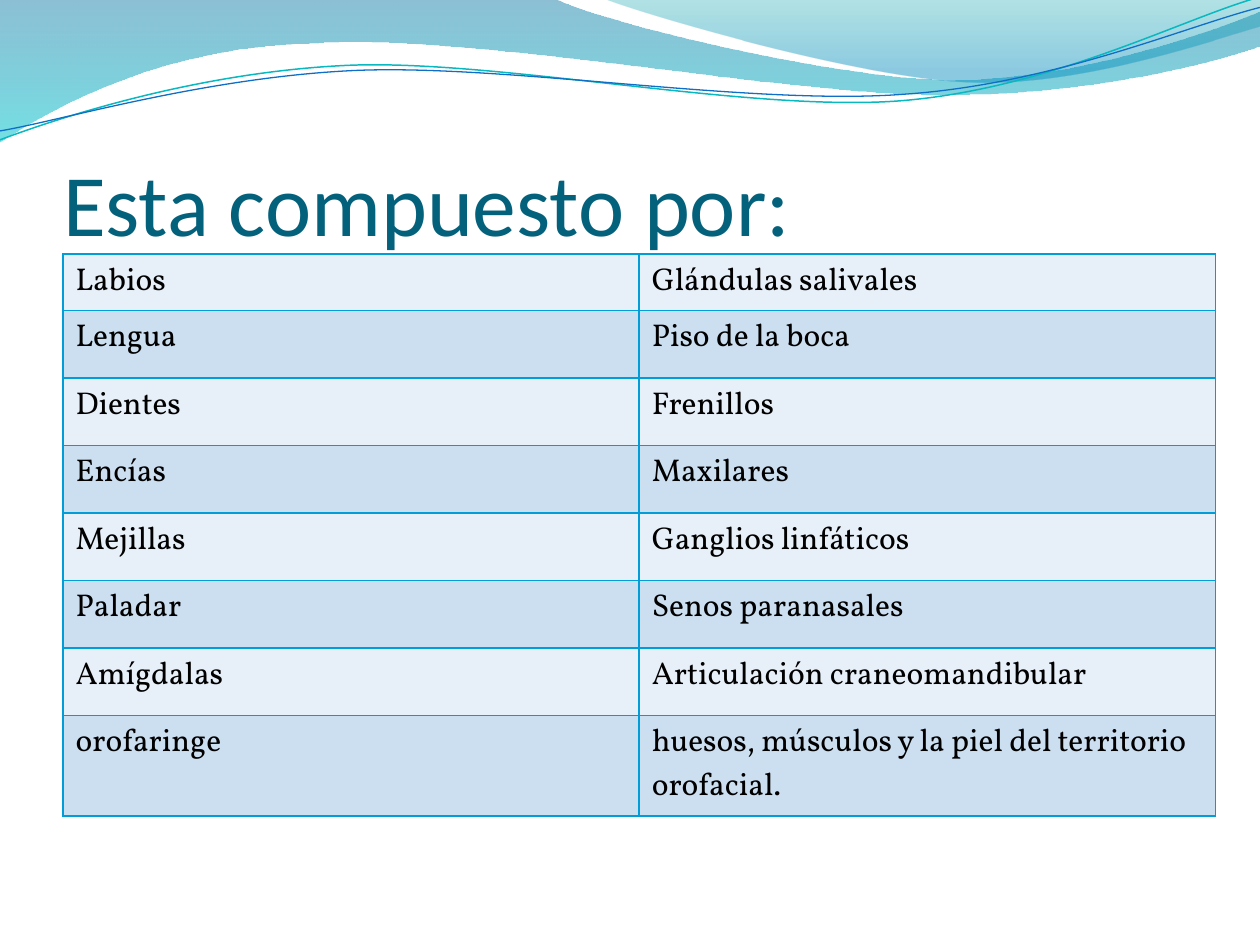
"""Build a slide with a wave header, a title and a two-column table of mouth structures."""
from dataclasses import dataclass
from typing import NamedTuple, Optional

from lxml.etree import SubElement
from pptx import Presentation
from pptx.dml.color import RGBColor
from pptx.enum.text import MSO_ANCHOR, MSO_AUTO_SIZE, PP_ALIGN
from pptx.oxml.ns import qn
from pptx.util import Cm, Pt


@dataclass(frozen=True)
class Theme:
    title_font: str = "Calibri"
    body_font: str = "Vollkorn"
    title_size: float = 50
    body_size: float = 18
    border_width: float = 1
    title: str = "04617B"
    body: str = "000000"
    border: str = "009DD9"
    bands: tuple = ("E7EFF8", "CCDFF1")


class Stop(NamedTuple):
    position: float
    color: str
    opacity: int


class Stroke(NamedTuple):
    color: str
    width: float


@dataclass(frozen=True)
class Wave:
    start: tuple
    segments: tuple
    gradient: tuple = ()
    stroke: Optional[Stroke] = None
    rotation: float = 0


THEME = Theme()
STROKE_TILT = 357.3

WAVES = (
    Wave(
        (0, 0),
        (
            ((11.18, -0.03),),
            ((12.09, 0.43), (16.87, 1.6), (19.25, 1.6)),
            ((21.67, 1.6), (24.33, 0.66), (25.4, 0.23)),
            ((25.43, 0.91),),
            ((24.97, 1.12), (22.1, 1.93), (18.95, 1.91)),
            ((15.8, 1.91), (9.7, 0.71), (6.53, 0.86)),
            ((3.28, 0.91), (1.17, 2.11), (-0.03, 2.87)),
            ((0, 0),),
        ),
        gradient=(Stop(0, "0074A1", 45), Stop(1, "00C6CF", 55)),
    ),
    Wave(
        (12.17, -0.03),
        (
            ((12.93, 0.28), (17.32, 1.57), (19.53, 1.65)),
            ((21.74, 1.75), (24.41, 0.81), (25.4, 0.53)),
            ((25.4, 0),),
            ((12.17, -0.03),),
        ),
        gradient=(Stop(0, "00A1A9", 30), Stop(0.8, "008BBF", 45)),
    ),
    Wave(
        (-0.05, 2.22),
        (
            ((1.19, 1.82), (4.02, 1.04), (7.05, 1.05)),
            ((10.05, 1.07), (15.02, 2.37), (18.08, 2.29)),
            ((21.13, 2.2), (23.86, 0.91), (25.41, 0.55)),
        ),
        stroke=Stroke("0AB8BF", 0.85),
        rotation=STROKE_TILT,
    ),
    Wave(
        (-0.04, 2.04),
        (
            ((1.16, 1.9), (4.17, 1.15), (7.2, 1.16)),
            ((10.25, 1.18), (15.13, 2.25), (18.19, 2.16)),
            ((21.21, 2.1), (23.93, 1.06), (25.45, 0.75)),
        ),
        stroke=Stroke("0F6FC6", 0.75),
        rotation=STROKE_TILT,
    ),
)

STRUCTURES = (
    ("Labios", "Glándulas salivales"),
    ("Lengua", "Piso de la boca"),
    ("Dientes", "Frenillos"),
    ("Encías", "Maxilares"),
    ("Mejillas", "Ganglios linfáticos"),
    ("Paladar", "Senos paranasales"),
    ("Amígdalas", "Articulación craneomandibular"),
    ("orofaringe", "huesos, músculos y la piel del territorio orofacial."),
)


def rgb(value: str) -> RGBColor:
    return RGBColor.from_string(value)


def bend(ribbon, segments: tuple) -> None:
    """Merge the three lines of each curved segment into one cubic Bézier."""
    outline = next(ribbon.element.iter(qn("a:path")))
    lines = iter(outline.findall(qn("a:lnTo")))
    for segment in segments:
        parts = [next(lines) for _ in segment]
        if len(parts) == 3:
            curve = SubElement(outline, qn("a:cubicBezTo"))
            parts[0].addprevious(curve)
            for part in parts:
                curve.append(part[0])
                outline.remove(part)


def draw_wave(slide, wave: Wave) -> None:
    points = [(Cm(x), Cm(y)) for segment in wave.segments for x, y in segment]
    builder = slide.shapes.build_freeform(*(Cm(value) for value in wave.start))
    builder.add_line_segments(points, close=bool(wave.gradient))
    ribbon = builder.convert_to_shape()
    bend(ribbon, wave.segments)
    ribbon.rotation = wave.rotation
    ribbon.shadow.inherit = False
    if wave.stroke:
        ribbon.fill.background()
        ribbon.line.color.rgb = rgb(wave.stroke.color)
        ribbon.line.width = Pt(wave.stroke.width)
        return
    ribbon.line.fill.background()
    ribbon.fill.gradient()
    ribbon.fill.gradient_angle = 270
    for target, stop in zip(ribbon.fill.gradient_stops, wave.gradient):
        target.position = stop.position
        target.color.rgb = rgb(stop.color)
    for color, stop in zip(ribbon.element.spPr.iter(qn("a:srgbClr")), wave.gradient):
        SubElement(color, qn("a:alpha"), val=str(stop.opacity * 1000))


def add_run(paragraph, text: str, font: str, size: float, color: str) -> None:
    run = paragraph.add_run()
    run.text = text
    run.font.name = font
    run.font.size = Pt(size)
    run.font.color.rgb = rgb(color)


def write_title(slide, text: str) -> None:
    title = slide.shapes.title
    title.left, title.top, title.width, title.height = Cm(1.27), Cm(1.95), Cm(22.86), Cm(3.18)
    frame = title.text_frame
    frame.auto_size = MSO_AUTO_SIZE.NONE
    frame.word_wrap = True
    frame.vertical_anchor = MSO_ANCHOR.BOTTOM
    frame.margin_left = frame.margin_right = frame.margin_bottom = Cm(0)
    frame.margin_top = Cm(0.13)
    heading = frame.paragraphs[0]
    heading.alignment = PP_ALIGN.LEFT
    add_run(heading, text, THEME.title_font, THEME.title_size, THEME.title)


def border_cell(cell) -> None:
    properties = cell._tc.get_or_add_tcPr()
    for side in ("a:lnL", "a:lnR", "a:lnT", "a:lnB"):
        edge = SubElement(properties, qn(side), w=str(Pt(THEME.border_width)))
        SubElement(SubElement(edge, qn("a:solidFill")), qn("a:srgbClr"), val=THEME.border)


def draw_table(slide, entries: tuple) -> None:
    table = slide.shapes.add_table(
        len(entries), len(entries[0]), Cm(1.27), Cm(5.12), Cm(23.23), Cm(10.95)
    ).table
    table.first_row = table.horz_banding = False
    for index, (row, texts) in enumerate(zip(table.rows, entries)):
        row.height = Cm(1.36 if index else 0.69)
        for cell, text in zip(row.cells, texts):
            border_cell(cell)
            cell.fill.solid()
            cell.fill.fore_color.rgb = rgb(THEME.bands[index % 2])
            add_run(cell.text_frame.paragraphs[0], text,
                    THEME.body_font, THEME.body_size, THEME.body)


def main() -> None:
    presentation = Presentation()
    presentation.slide_width, presentation.slide_height = Cm(25.4), Cm(19.05)
    slide = presentation.slides.add_slide(presentation.slide_layouts.get_by_name("Title Only"))
    for wave in WAVES:
        draw_wave(slide, wave)
    write_title(slide, "Esta compuesto por:")
    draw_table(slide, STRUCTURES)
    presentation.save("out.pptx")


if __name__ == "__main__":
    main()
